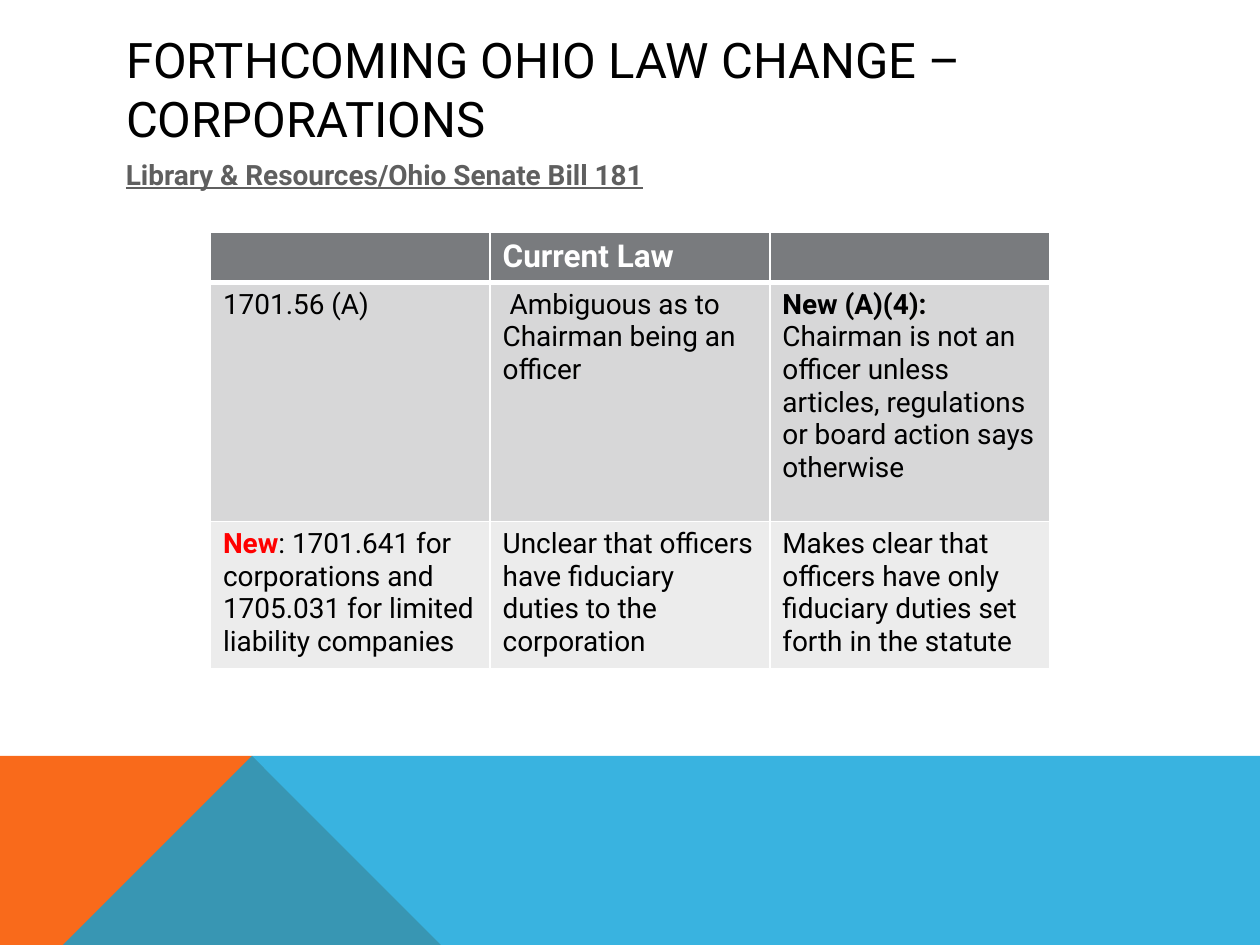
from lxml import etree
from pptx import Presentation
from pptx.dml.color import RGBColor
from pptx.enum.text import MSO_ANCHOR, PP_ALIGN
from pptx.oxml.ns import qn
from pptx.util import Inches, Pt

MIDDLE, LEFT = MSO_ANCHOR.MIDDLE, PP_ALIGN.LEFT
FONT = "Roboto"
TITLE = "FORTHCOMING OHIO LAW CHANGE – CORPORATIONS"
SOURCE = "Library & Resources/Ohio Senate Bill 181"
HEAD = {"size": Pt(18), "bold": True, "color": "FFFFFF"}
BODY = {"size": Pt(16), "bold": False, "color": "000000"}
BOLD = {**BODY, "bold": True}
RED = {**BOLD, "color": "FF0000"}
ROWS = [
    (0.4, "797B7E", 3, [[], [("Current Law", HEAD)], []]),
    (1.9, "D7D7D8", 1, [
        [("1701.56 (A)", BODY)],
        [(" Ambiguous as to Chairman being an officer", BODY)],
        [("New (A)(4): ", BOLD),
         ("Chairman is not an officer unless articles, regulations "
          "or board action says otherwise", BODY)]]),
    (1.13, "ECECEC", 1, [
        [("New", RED),
         (": 1701.641 for corporations and 1705.031 for limited "
          "liability companies", BODY)],
        [("Unclear that officers have fiduciary duties to the corporation", BODY)],
        [("Makes clear that officers have only fiduciary duties set forth "
          "in the statute", BODY)]]),
]
TOP, PEAK = 5.52, 2.23
BANDS = [
    ("F96A1B", 100, [(0, 7.5), (0, TOP), (PEAK, TOP), (3.91, 7.5)]),
    ("08A1D9", 80, [(0, 7.5), (PEAK, TOP), (10, TOP), (10, 7.5)]),
]


def paint(fill, color):
    """Make a fill solid in a hex colour."""
    fill.solid()
    fill.fore_color.rgb = RGBColor.from_string(color)


def write(para, text, form):
    """Add a run with the given format."""
    run = para.add_run()
    run.text = text
    run.font.name = FONT
    for key, value in form.items():
        if key == "color":
            run.font.color.rgb = RGBColor.from_string(value)
        else:
            setattr(run.font, key, value)


def band(slide, color, alpha, points):
    """Draw one filled shape along the foot of the slide."""
    pen = slide.shapes.build_freeform(*points[0], scale=Inches(1))
    pen.add_line_segments(points[1:], close=True)
    shape = pen.convert_to_shape()
    shape.shadow.inherit = False
    shape.line.fill.background()
    paint(shape.fill, color)
    if alpha < 100:
        tint = shape.fill._xPr.find(".//" + qn("a:srgbClr"))
        etree.SubElement(tint, qn("a:alpha"), val=str(alpha * 1000))


def border(cell, widths):
    """Give a cell white borders of the given point widths."""
    props = cell._tc.get_or_add_tcPr()
    for side, width in widths.items():
        line = etree.SubElement(props, qn("a:ln" + side), w=str(Pt(width)))
        fill = etree.SubElement(line, qn("a:solidFill"))
        etree.SubElement(fill, qn("a:srgbClr"), val="FFFFFF")


def grid(slide):
    """Build the table of law changes."""
    high = sum(row[0] for row in ROWS)
    frame = slide.shapes.add_table(
        len(ROWS), 3, Inches(1.67), Inches(1.84), Inches(6.66), Inches(high))
    table = frame.table
    above = 1
    for r, (height, color, below, cells) in enumerate(ROWS):
        table.rows[r].height = Inches(height)
        for c, runs in enumerate(cells):
            cell = table.cell(r, c)
            border(cell, {"L": 1, "R": 1, "T": above, "B": below})
            paint(cell.fill, color)
            for text, form in runs:
                write(cell.text_frame.paragraphs[0], text, form)
        above = below


def main():
    """Build and save the slide."""
    deck = Presentation()
    deck.slide_width, deck.slide_height = Inches(10), Inches(7.5)
    slide = deck.slides.add_slide(deck.slide_layouts[5])
    for item in BANDS:
        band(slide, *item)
    title = slide.shapes.title
    title.left, title.top = Inches(0.9), Inches(0.4)
    title.width, title.height = Inches(8.22), Inches(0.6)
    title.text_frame.vertical_anchor = MIDDLE
    note = slide.shapes.add_textbox(
        Inches(0.9), Inches(1.2), Inches(8.22), Inches(3.91))
    texts = [
        (title, TITLE, {"size": Pt(28), "color": "000000"}),
        (note, SOURCE, {**BOLD, "color": "5F5F5F", "underline": True}),
    ]
    for shape, text, form in texts:
        shape.text_frame.word_wrap = True
        para = shape.text_frame.paragraphs[0]
        para.alignment = LEFT
        write(para, text, form)
    grid(slide)
    deck.save("out.pptx")


if __name__ == "__main__":
    main()
